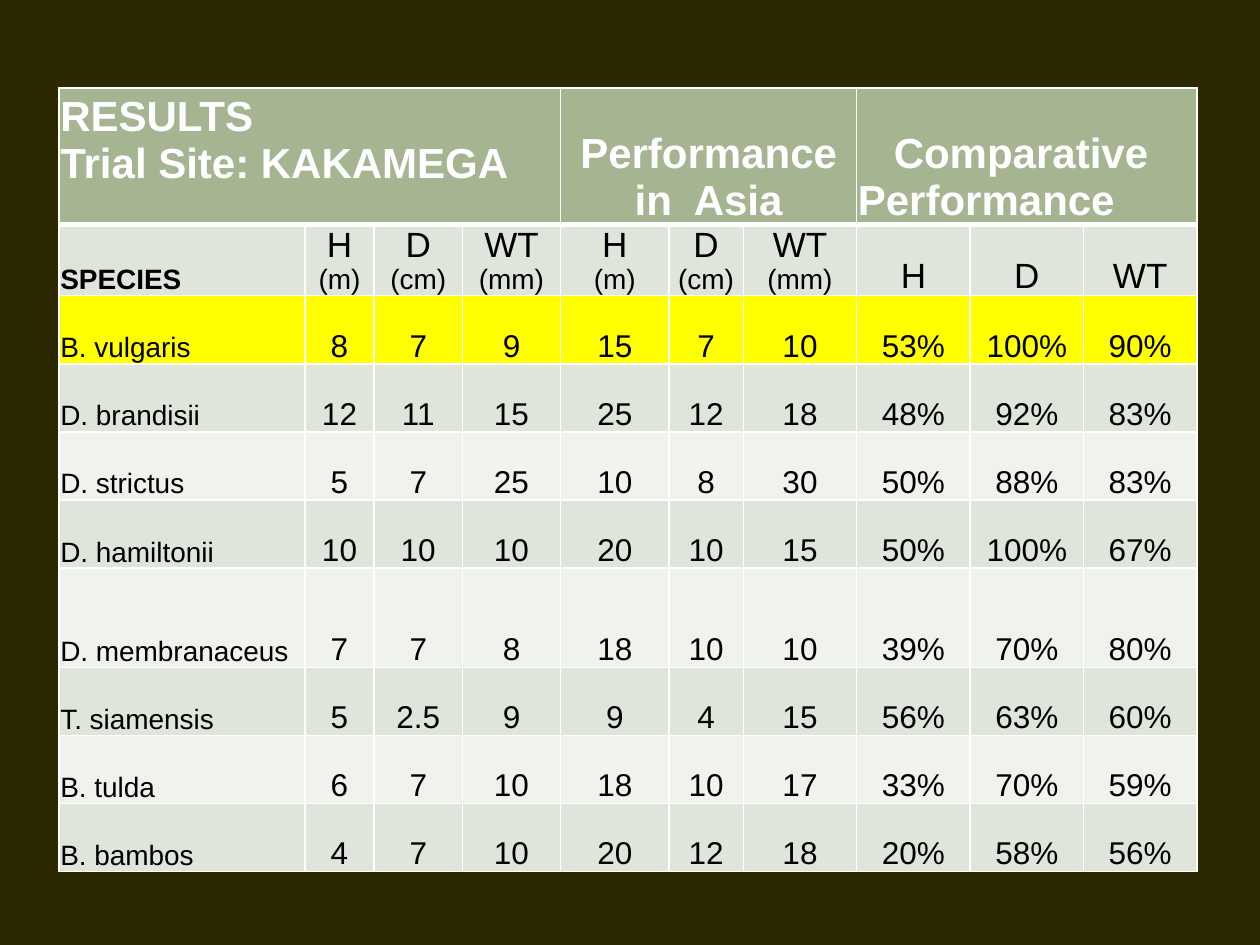
from lxml import etree
from pptx import Presentation
from pptx.dml.color import RGBColor
from pptx.enum import text
from pptx.oxml import ns
from pptx.util import Pt

WHITE = RGBColor(0xFF, 0xFF, 0xFF)
BLACK = RGBColor(0x00, 0x00, 0x00)
BACKGROUND = RGBColor(0x2C, 0x29, 0x00)
GREEN = RGBColor(0xA5, 0xB5, 0x92)
BAND_DARK = RGBColor(0xE0, 0xE5, 0xDB)
BAND_LIGHT = RGBColor(0xF0, 0xF2, 0xEE)
HIGHLIGHT = RGBColor(0xFF, 0xFF, 0x00)
LEFT, CENTER = text.PP_ALIGN.LEFT, text.PP_ALIGN.CENTER

# Content: (first column, last column, space below, lines with alignment)
groups = [
    (0, 3, 21.2, [("RESULTS", LEFT), ("Trial Site: KAKAMEGA", LEFT)]),
    (4, 6, 0, [("Performance", CENTER), (" in  Asia ", CENTER)]),
    (7, 9, 0, [("Comparative ", CENTER), ("Performance", LEFT)]),
]
measures = [("H", "(m)"), ("D", "(cm)"), ("WT", "(mm)")]
headings = measures * 2 + [(name,) for name, unit in measures]
species = [
    ("B. vulgaris", "8", "7", "9", "15", "7", "10", "53%", "100%", "90%"),
    ("D. brandisii", "12", "11", "15", "25", "12", "18", "48%", "92%", "83%"),
    ("D. strictus", "5", "7", "25", "10", "8", "30", "50%", "88%", "83%"),
    ("D. hamiltonii", "10", "10", "10", "20", "10", "15", "50%", "100%", "67%"),
    ("D. membranaceus", "7", "7", "8", "18", "10", "10", "39%", "70%", "80%"),
    ("T. siamensis", "5", "2.5", "9", "9", "4", "15", "56%", "63%", "60%"),
    ("B. tulda", "6", "7", "10", "18", "10", "17", "33%", "70%", "59%"),
    ("B. bambos", "4", "7", "10", "20", "12", "18", "20%", "58%", "56%"),
]

# Layout
TABLE_LEFT, TABLE_TOP = 33.8, 50.4
widths = [140.4, 39.6, 50.4, 56.2, 61.9, 42.5] + [64.8] * 4
heights = [77.8] + [38.9] * 9
heights[6] = 56.9  # D. membranaceus
HIGHLIGHT_ROW = 2


def set_borders(cell, row):
    """White grid, with a thicker rule under the group header."""
    weights = {"lnL": 1, "lnR": 1, "lnT": 3 if row == 1 else 1, "lnB": 3 if row == 0 else 1}
    properties = cell._tc.get_or_add_tcPr()
    for side, weight in weights.items():
        line = etree.SubElement(properties, ns.qn(f"a:{side}"), w=str(Pt(weight)))
        fill = etree.SubElement(line, ns.qn("a:solidFill"))
        etree.SubElement(fill, ns.qn("a:srgbClr"), val=str(WHITE))


def row_color(row):
    if row == 0:
        return GREEN
    if row == HIGHLIGHT_ROW:
        return HIGHLIGHT
    return BAND_DARK if row % 2 or row == 1 else BAND_LIGHT


def write(cell, lines, bold=False, color=BLACK):
    """Fill a cell with (wording, size, alignment) lines."""
    for index, (wording, size, alignment) in enumerate(lines):
        frame = cell.text_frame
        para = frame.paragraphs[0] if index == 0 else frame.add_paragraph()
        para.alignment = alignment
        span = para.add_run()
        span.text = wording
        span.font.color.rgb = color
        for name, value in {"name": "Arial", "size": Pt(size), "bold": bold}.items():
            setattr(span.font, name, value)


deck = Presentation()
deck.slide_width, deck.slide_height = Pt(720), Pt(540)
page = deck.slides.add_slide(deck.slide_layouts[6])
page.background.fill.solid()
page.background.fill.fore_color.rgb = BACKGROUND

# Table grid
frame = page.shapes.add_table(len(heights), len(widths), Pt(TABLE_LEFT), Pt(TABLE_TOP),
                              Pt(sum(widths)), Pt(sum(heights)))
table = frame.table
table.first_row = table.horz_banding = False
for column, width in zip(table.columns, widths):
    column.width = Pt(width)
for row, height in zip(table.rows, heights):
    row.height = Pt(height)

cell_format = {"margin_left": Pt(0.7), "margin_right": Pt(0.7), "margin_top": Pt(0.7),
               "margin_bottom": Pt(0), "vertical_anchor": text.MSO_ANCHOR.BOTTOM}
for r in range(len(heights)):
    for c in range(len(widths)):
        cell = table.cell(r, c)
        set_borders(cell, r)
        cell.fill.solid()
        cell.fill.fore_color.rgb = row_color(r)
        for name, value in cell_format.items():
            setattr(cell, name, value)

# Group header
for first, last, space_below, lines in groups:
    cell = table.cell(0, first)
    cell.merge(table.cell(0, last))
    cell.margin_bottom = Pt(space_below)
    write(cell, [(wording, 24, alignment) for wording, alignment in lines], True, WHITE)

# Column headings
write(table.cell(1, 0), [("SPECIES", 16, LEFT)], True)
for c, heading in enumerate(headings, 1):
    write(table.cell(1, c), [(wording, size, CENTER) for wording, size in zip(heading, (20, 16))])

# Species rows
for r, (name, *values) in enumerate(species, 2):
    write(table.cell(r, 0), [(name, 16, LEFT)])
    for c, value in enumerate(values, 1):
        write(table.cell(r, c), [(value, 18, CENTER)])

deck.save("out.pptx")
